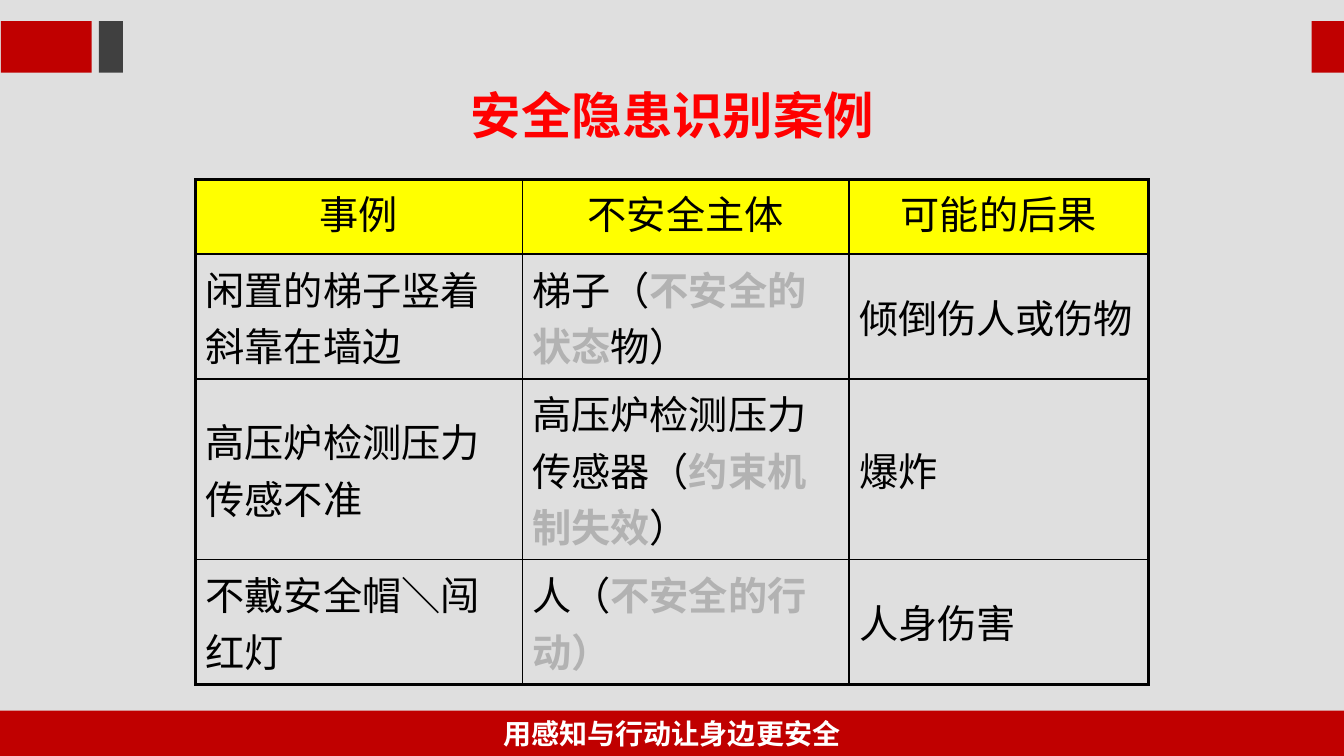
from lxml import etree
from pptx import Presentation
from pptx.dml.color import RGBColor
from pptx.enum import shapes, text
from pptx.oxml.ns import qn
from pptx.util import Inches, Pt

FONT = "Noto Sans CJK SC"
RED, DARK, YELLOW, GREY = "C00000", "404040", "FFFF00", "B2B2B2"
BLACK, WHITE = "000000", "FFFFFF"
THIN, THICK = 1, 2.25

BLOCKS = [
    (0, 7.05, 13.33, 0.45, RED),
    (13.01, 0.21, 0.32, 0.51, RED),
    (0.01, 0.21, 0.9, 0.51, RED),
    (0.98, 0.21, 0.24, 0.51, DARK),
]
COLUMN_WIDTHS = [3.24, 3.24, 2.97]
ROW_HEIGHTS = [0.74, 1.24, 1.79, 1.24]
# Each cell is a list of pieces; every second piece is emphasised.
CASES = [
    [["事例"], ["不安全主体"], ["可能的后果"]],
    [["闲置的梯子竖着斜靠在墙边"], ["梯子（", "不安全的状态", "物）"], ["倾倒伤人或伤物"]],
    [["高压炉检测压力传感不准"], ["高压炉检测压力传感器（", "约束机制失效", "）"], ["爆炸"]],
    [["不戴安全帽＼闯红灯"], ["人（", "不安全的行动）"], ["人身伤害"]],
]


def rgb(value):
    return RGBColor.from_string(value)


def style(paragraph, size, color, bold=False, align=text.PP_ALIGN.CENTER):
    paragraph.alignment = align
    font = paragraph.font
    font.size = Pt(size)
    font.bold = bold
    font.color.rgb = rgb(color)
    font.name = FONT
    latin = paragraph._p.pPr.find(qn("a:defRPr")).find(qn("a:latin"))
    east_asian = etree.Element(qn("a:ea"), typeface=FONT)
    latin.addnext(east_asian)


def add_block(slide, left, top, width, height, color):
    block = slide.shapes.add_shape(
        shapes.MSO_SHAPE.RECTANGLE,
        Inches(left), Inches(top), Inches(width), Inches(height))
    block.shadow.inherit = False
    block.fill.solid()
    block.fill.fore_color.rgb = rgb(color)
    block.line.fill.background()


def add_heading(slide, left, top, width, height, words, size, color, wrap=True):
    frame = slide.shapes.add_textbox(
        Inches(left), Inches(top), Inches(width), Inches(height)).text_frame
    frame.word_wrap = wrap
    frame.vertical_anchor = text.MSO_ANCHOR.MIDDLE
    paragraph = frame.paragraphs[0]
    paragraph.add_run().text = words
    style(paragraph, size, color, bold=True)


def set_borders(cell, widths):
    """Draw black borders; widths are points for left, right, top, bottom."""
    properties = cell._tc.get_or_add_tcPr()
    for index, (side, width) in enumerate(zip("LRTB", widths)):
        line = etree.Element(qn(f"a:ln{side}"), w=str(Pt(width)))
        fill = etree.SubElement(line, qn("a:solidFill"))
        etree.SubElement(fill, qn("a:srgbClr"), val=BLACK)
        properties.insert(index, line)


def fill_cell(cell, pieces, is_header):
    if is_header:
        cell.fill.solid()
        cell.fill.fore_color.rgb = rgb(YELLOW)
    else:
        cell.fill.background()
        cell.vertical_anchor = text.MSO_ANCHOR.MIDDLE
    paragraph = cell.text_frame.paragraphs[0]
    for index, piece in enumerate(pieces):
        run = paragraph.add_run()
        run.text = piece
        if index % 2:
            run.font.bold = True
            run.font.color.rgb = rgb(GREY)
    align = text.PP_ALIGN.CENTER if is_header else text.PP_ALIGN.LEFT
    style(paragraph, 28, BLACK, align=align)


def add_case_table(slide, left, top):
    last_row, last_column = len(ROW_HEIGHTS) - 1, len(COLUMN_WIDTHS) - 1
    table = slide.shapes.add_table(
        len(ROW_HEIGHTS), len(COLUMN_WIDTHS), Inches(left), Inches(top),
        Inches(sum(COLUMN_WIDTHS)), Inches(sum(ROW_HEIGHTS))).table
    table.first_row = False
    table.horz_banding = False
    for column, width in zip(table.columns, COLUMN_WIDTHS):
        column.width = Inches(width)
    for row, height in zip(table.rows, ROW_HEIGHTS):
        row.height = Inches(height)
    for r, case in enumerate(CASES):
        for c, pieces in enumerate(case):
            cell = table.cell(r, c)
            fill_cell(cell, pieces, is_header=r == 0)
            outer = (c == 0, c == last_column, r == 0, r == last_row)
            set_borders(cell, [THICK if edge else THIN for edge in outer])


def main():
    deck = Presentation()
    deck.slide_width, deck.slide_height = Inches(13.33), Inches(7.5)
    slide = deck.slides.add_slide(deck.slide_layouts[6])
    slide.background.fill.solid()
    slide.background.fill.fore_color.rgb = rgb("DFDFDF")
    for block in BLOCKS:
        add_block(slide, *block)
    add_heading(slide, 0, 7.14, 13.33, 0.26, "用感知与行动让身边更安全", 20, WHITE, wrap=False)
    add_heading(slide, 2.42, 0.51, 8.5, 1.25, "安全隐患识别案例", 36, "FF0000")
    add_case_table(slide, 1.94, 1.78)
    deck.save("out.pptx")


if __name__ == "__main__":
    main()
